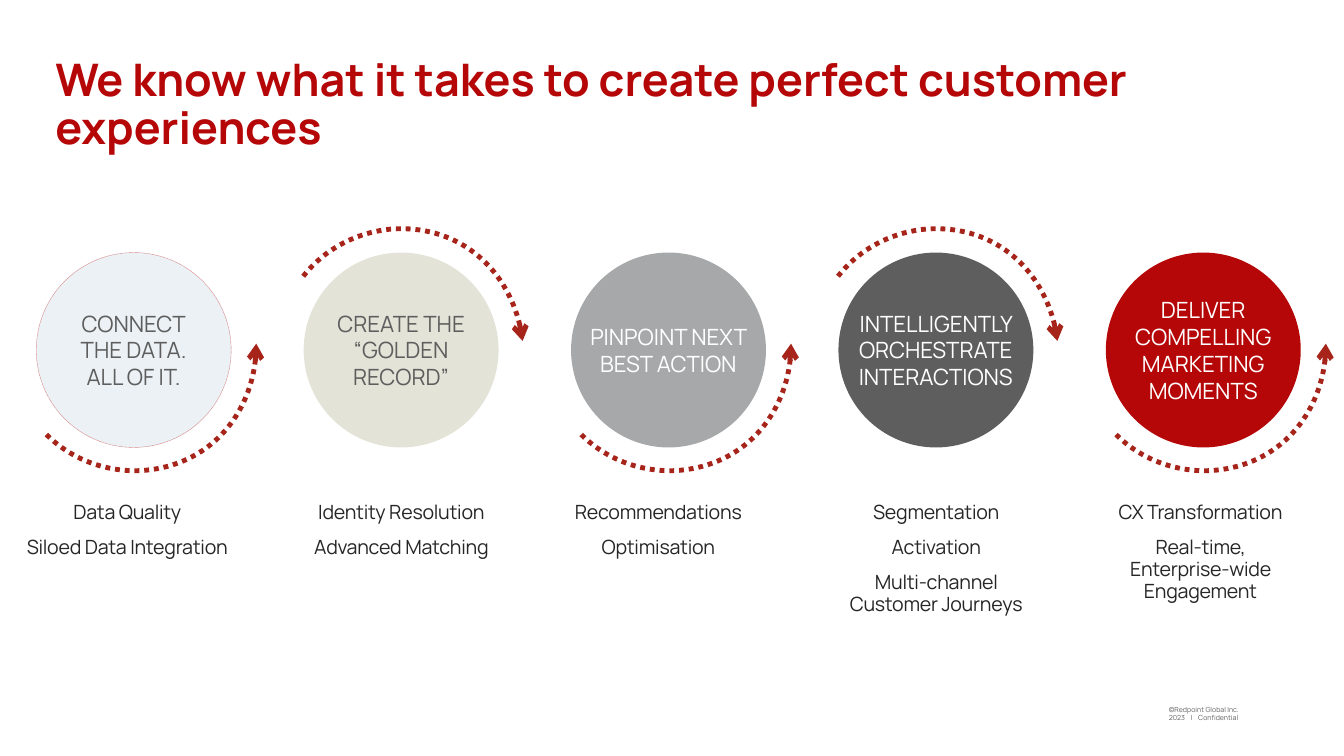
from lxml.etree import SubElement
from pptx import Presentation
from pptx.dml.color import RGBColor
from pptx.enum.dml import MSO_LINE
from pptx.enum.shapes import MSO_SHAPE
from pptx.enum.text import MSO_ANCHOR, PP_ALIGN
from pptx.oxml.ns import qn
from pptx.util import Pt

COLORS = {
    "red": "B50707",
    "arrow": "A62419",
    "ice": "EBF1F4",
    "sand": "E4E3D8",
    "silver": "A7A8A9",
    "slate": "5E5E5E",
    "ink": "262626",
    "footer": "5F5E5F",
    "white": "FFFFFF",
}
FONT = "Manrope"

DIAMETER = 139.2
FIRST_LEFT, STEP, CIRCLE_TOP = 25.9, 191, 180.4
# Tip of the arrow, then two cubic curves of three points each
ARC_POINTS = [(151.4, 0), (152, 48.3), (114.5, 89.3), (66.2, 90.8),
              (41, 91), (17.3, 81.4), (0, 63.4)]
ARC_BELOW_SHIFT, ARC_BELOW_TOP = 5.8, 245.5
ARC_ABOVE_SHIFT, ARC_ABOVE_TOP = 0, 162

# Circle label, fill, label colour, label width and height,
# list left, width and side margin, list items
STAGES = [
    (["CONNECT", "THE DATA.", "ALL OF IT."], "ice", "slate", 130, 37,
     8.4, 165, 7.2, ["Data Quality", "Siloed Data Integration"]),
    (["CREATE THE “GOLDEN RECORD”"], "sand", "slate", 122, 62,
     204.2, 165, 7.2, ["Identity Resolution", "Advanced Matching"]),
    (["PINPOINT NEXT BEST ACTION"], "silver", "white", 122, 37,
     392.5, 155.5, 7.2, ["Recommendations", "Optimisation"]),
    (["INTELLIGENTLY ORCHESTRATE INTERACTIONS"], "slate", "white", 130, 53,
     593.5, 150.5, 7.2, ["Segmentation", "Activation", "Multi-channel Customer Journeys"]),
    (["DELIVER COMPELLING MARKETING", "MOMENTS"], "red", "white", 122, 68,
     779.8, 155.5, 14, ["CX Transformation", "Real-time, Enterprise-wide Engagement"]),
]


def rgb(name):
    return RGBColor.from_string(COLORS[name])


def add_text(page, left, top, width, height, lines, *, size, color, bold=False,
             align=PP_ALIGN.LEFT, anchor=MSO_ANCHOR.TOP, margins=(7.2, 3.6),
             line_spacing=None, gap=0, tracking=None, tabs=()):
    """Add one paragraph per line; gap separates paragraphs, tabs are stops in points."""
    box = page.shapes.add_textbox(Pt(left), Pt(top), Pt(width), Pt(height))
    frame = box.text_frame
    frame.word_wrap = True
    frame.vertical_anchor = anchor
    frame.margin_left = frame.margin_right = Pt(margins[0])
    frame.margin_top = frame.margin_bottom = Pt(margins[1])
    for index, line in enumerate(lines):
        para = frame.add_paragraph() if index else frame.paragraphs[0]
        para.alignment = align
        if line_spacing:
            para.line_spacing = line_spacing
        if index and gap:
            para.space_before = Pt(gap)
        if tabs:
            stops = SubElement(para._p.get_or_add_pPr(), qn("a:tabLst"))
            for stop in tabs:
                SubElement(stops, qn("a:tab"), pos=str(Pt(stop)), algn="l")
        span = para.add_run()
        span.text = line
        span.font.name = FONT
        span.font.size = Pt(size)
        span.font.bold = bold
        span.font.color.rgb = rgb(color)
        if tracking:
            span._r.get_or_add_rPr().set("spc", str(round(tracking * 100)))


def add_circle(page, left, fill):
    circle = page.shapes.add_shape(
        MSO_SHAPE.OVAL, Pt(left), Pt(CIRCLE_TOP), Pt(DIAMETER), Pt(DIAMETER))
    circle.shadow.inherit = False
    circle.fill.solid()
    circle.fill.fore_color.rgb = rgb(fill)
    circle.line.fill.background()
    return circle


def add_faint_outline(circle):
    line = circle.line
    line.color.rgb = rgb("red")
    line.width = Pt(0.25)
    line.dash_style = MSO_LINE.SQUARE_DOT
    color = line._ln.find(".//" + qn("a:srgbClr"))
    SubElement(color, qn("a:alpha"), val="49000")


def bend_segments(shape):
    """Turn every three straight segments into one cubic curve."""
    segments = list(shape._element.iter(qn("a:lnTo")))
    for first in range(0, len(segments), 3):
        curve, *others = segments[first:first + 3]
        bezier = SubElement(curve.getparent(), qn("a:cubicBezTo"))
        for segment in (curve, *others):
            bezier.append(segment[0])
            segment.getparent().remove(segment)


def add_arc_arrow(page, left, top, above):
    points = [(Pt(left + x), Pt(top + y)) for x, y in ARC_POINTS]
    builder = page.shapes.build_freeform(*points[0])
    builder.add_line_segments(points[1:], close=False)
    arc = builder.convert_to_shape()
    bend_segments(arc)
    if above:
        arc.rotation = 173
        arc._element.spPr.find(qn("a:xfrm")).set("flipH", "1")
    arc.shadow.inherit = False
    arc.fill.background()
    arc.line.color.rgb = rgb("arrow")
    arc.line.width = Pt(3.5)
    arc.line.dash_style = MSO_LINE.ROUND_DOT
    SubElement(arc.line._ln, qn("a:headEnd"), type="arrow")


def main():
    deck = Presentation()
    deck.slide_width, deck.slide_height = Pt(960), Pt(540)
    page = deck.slides.add_slide(deck.slide_layouts[6])

    add_text(page, 32.4, 37.4, 927.4, 76.3,
             ["We know what it takes to create perfect customer experiences"],
             size=32, color="red", bold=True, anchor=MSO_ANCHOR.MIDDLE, line_spacing=0.9)

    center_y = CIRCLE_TOP + DIAMETER / 2
    for index, stage in enumerate(STAGES):
        (label, fill, label_color, width, height,
         list_left, list_width, list_margin, items) = stage
        left = FIRST_LEFT + index * STEP
        center_x = left + DIAMETER / 2
        circle = add_circle(page, left, fill)
        if index == 0:
            add_faint_outline(circle)
        add_text(page, center_x - width / 2, center_y - height / 2, width, height, label,
                 size=16, color=label_color, align=PP_ALIGN.CENTER,
                 anchor=MSO_ANCHOR.MIDDLE, margins=(3, 3))
        if index % 2:
            add_arc_arrow(page, left + ARC_ABOVE_SHIFT, ARC_ABOVE_TOP, above=True)
        else:
            add_arc_arrow(page, left + ARC_BELOW_SHIFT, ARC_BELOW_TOP, above=False)
        add_text(page, list_left, 354.6, list_width, 110, items, size=14, color="ink",
                 align=PP_ALIGN.CENTER, margins=(list_margin, 3.6),
                 line_spacing=0.95, gap=9, tracking=-0.2)

    add_text(page, 830.6, 499.5, 69, 20, ["©Redpoint Global Inc. 2023\t|\tConfidential"],
             size=5, color="footer", margins=(4.3, 4.3), tabs=(15.5, 21))
    deck.save("out.pptx")


if __name__ == "__main__":
    main()
